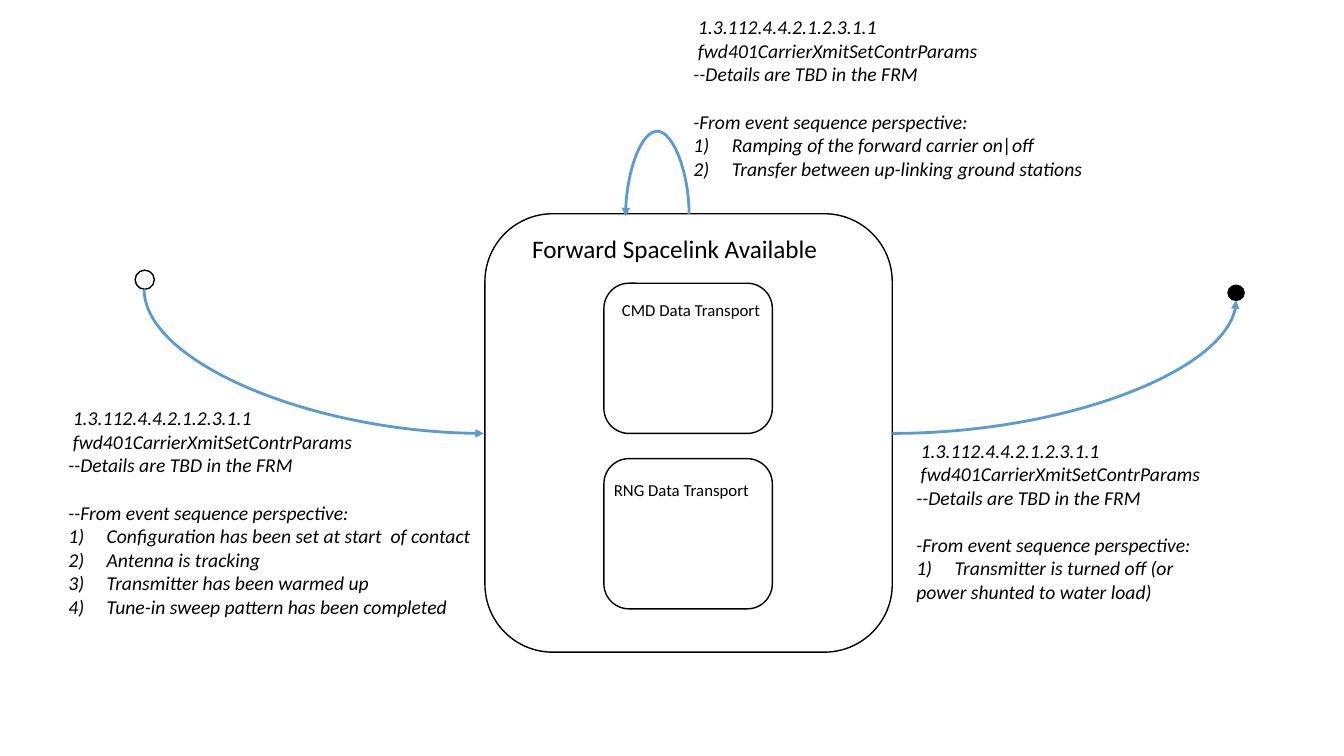
from lxml import etree
from pptx import Presentation
from pptx.dml.color import RGBColor
from pptx.enum.shapes import MSO_CONNECTOR, MSO_SHAPE
from pptx.oxml.ns import qn
from pptx.util import Inches, Pt

BLACK = RGBColor(0x00, 0x00, 0x00)
WHITE = RGBColor(0xFF, 0xFF, 0xFF)
BLUE = RGBColor(0x5B, 0x9B, 0xD5)

DIRECTIVE = [
    " 1.3.112.4.4.2.1.2.3.1.1",
    " fwd401CarrierXmitSetContrParams",
    "--Details are TBD in the FRM",
]
PERSPECTIVE = "-From event sequence perspective:"
START_STEPS = [
    "Configuration has been set at start  of contact",
    "Antenna is tracking",
    "Transmitter has been warmed up",
    "Tune-in sweep pattern has been completed",
]
LOOP_STEPS = [
    "Ramping of the forward carrier on|off",
    "Transfer between up-linking ground stations",
]
END_STEPS = ["Transmitter is turned off (or"]


def add_outlined(slide, kind, box, fill=WHITE):
    sp = slide.shapes.add_shape(kind, *map(Inches, box))
    sp.shadow.inherit = False
    sp.fill.solid()
    sp.fill.fore_color.rgb = fill
    sp.line.color.rgb = BLACK
    sp.line.width = Pt(1)


def add_text_frame(slide, box):
    tf = slide.shapes.add_textbox(*map(Inches, box)).text_frame
    tf.word_wrap = True
    return tf


def write_line(p, text, size, italic=False):
    r = p.add_run()
    r.text = text
    r.font.color.rgb = BLACK
    for name, value in {"name": "Calibri", "size": Pt(size), "italic": italic}.items():
        setattr(r.font, name, value)


def add_label(slide, box, text, size):
    write_line(add_text_frame(slide, box).paragraphs[0], text, size)


def number_paragraph(p):
    pPr = p._p.get_or_add_pPr()
    pPr.set("marL", str(Inches(0.38)))
    pPr.set("indent", str(-Inches(0.38)))
    etree.SubElement(pPr, qn("a:buFont"), typeface="+mj-lt")
    etree.SubElement(pPr, qn("a:buAutoNum"), type="arabicParenR")


def add_event_note(slide, box, heading, steps, closing=()):
    tf = add_text_frame(slide, box)
    for i, text in enumerate([*DIRECTIVE, heading, *steps, *closing]):
        p = tf.add_paragraph() if i else tf.paragraphs[0]
        if text == heading:
            p.space_before = Pt(17)
        if text in steps:
            number_paragraph(p)
        write_line(p, text, 14, italic=True)


def add_curved_arrow(slide, begin, end, preset, rotation=0, bend=None):
    cxn = slide.shapes.add_connector(MSO_CONNECTOR.CURVE, *map(Inches, begin + end))
    cxn.line.color.rgb = BLUE
    cxn.line.width = Pt(2)
    spPr = cxn._element.spPr
    spPr.find(qn("a:xfrm")).set("rot", str(rotation * 60000))
    geom = spPr.find(qn("a:prstGeom"))
    geom.set("prst", preset)
    if bend is not None:
        guides = geom.find(qn("a:avLst"))
        etree.SubElement(guides, qn("a:gd"), name="adj1", fmla=f"val {bend}")
    etree.SubElement(cxn.line._get_or_add_ln(), qn("a:tailEnd"), type="triangle")
    etree.SubElement(spPr, qn("a:effectLst"))


def main():
    prs = Presentation()
    prs.slide_width, prs.slide_height = Inches(13.33), Inches(7.5)
    slide = prs.slides.add_slide(prs.slide_layouts[6])

    add_outlined(slide, MSO_SHAPE.OVAL, (1.34, 2.68, 0.19, 0.19))
    add_outlined(slide, MSO_SHAPE.ROUNDED_RECTANGLE, (4.81, 2.12, 4.04, 4.35))
    add_outlined(slide, MSO_SHAPE.OVAL, (12.18, 2.83, 0.16, 0.15), BLACK)
    for top in (2.81, 4.55):
        add_outlined(slide, MSO_SHAPE.ROUNDED_RECTANGLE, (5.99, top, 1.67, 1.49))

    add_label(slide, (5.18, 2.27, 3.31, 0.4), "Forward Spacelink Available", 18)
    add_label(slide, (6.07, 2.92, 1.67, 0.3), "CMD Data Transport", 12)
    add_label(slide, (5.99, 4.71, 1.67, 0.3), "RNG Data Transport", 12)

    add_curved_arrow(slide, (3.83, 1.9), (2.4, 5.27), "curvedConnector2", 270)
    add_curved_arrow(slide, (8.85, 4.3), (12.26, 2.98), "curvedConnector2")
    add_curved_arrow(slide, (6.53, 2.45), (6.51, 1.82), "curvedConnector3", 270, -4100000)

    add_event_note(slide, (0.58, 3.98, 4.23, 3.4), "-" + PERSPECTIVE, START_STEPS)
    add_event_note(slide, (8.99, 4.3, 3.1, 1.75), PERSPECTIVE, END_STEPS,
                   ["power shunted to water load)"])
    add_event_note(slide, (6.78, 0.1, 4.14, 1.99), PERSPECTIVE, LOOP_STEPS)

    prs.save("out.pptx")


if __name__ == "__main__":
    main()
